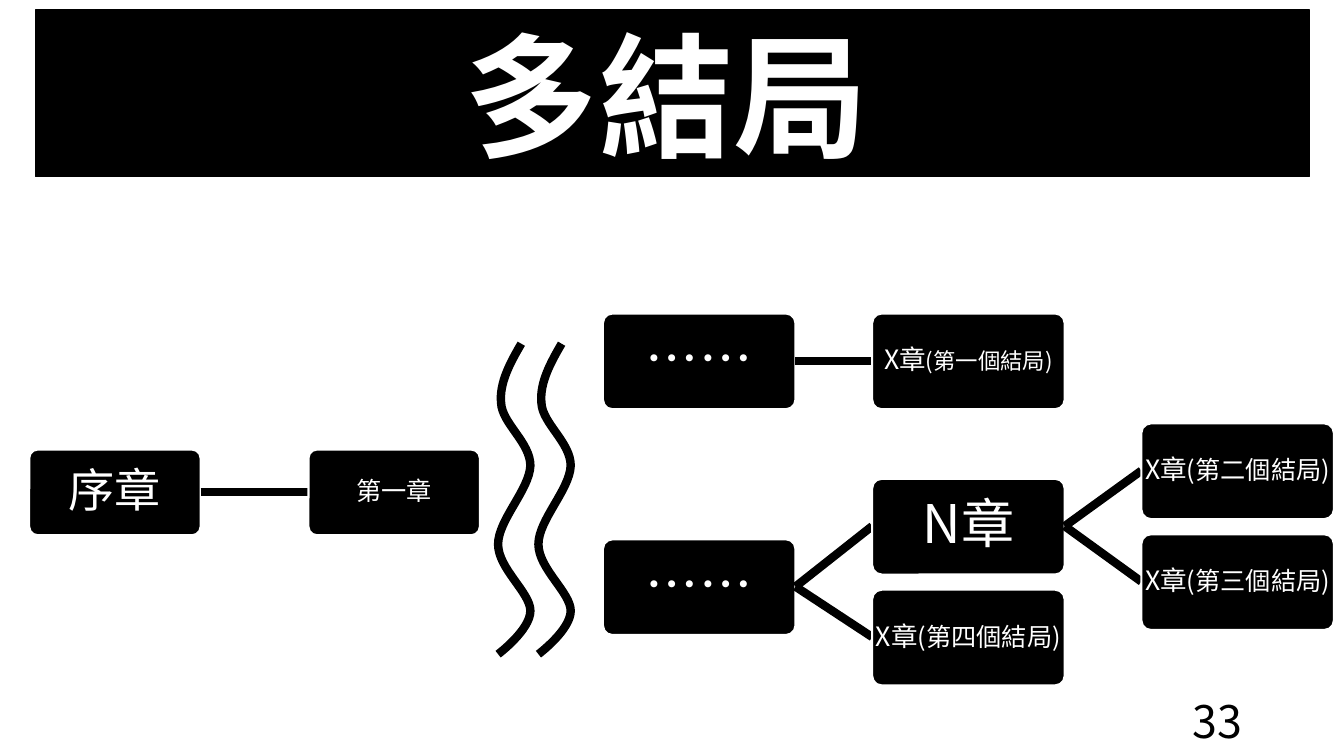
from lxml.etree import SubElement
from pptx import Presentation
from pptx.dml.color import RGBColor
from pptx.enum.lang import MSO_LANGUAGE_ID as LANG
from pptx.enum.shapes import MSO_CONNECTOR, MSO_SHAPE
from pptx.enum.text import MSO_ANCHOR, MSO_AUTO_SIZE, PP_ALIGN
from pptx.oxml.ns import qn
from pptx.util import Pt

PX = 9144  # 100 px to the inch
CJK = "Noto Sans CJK SC"


def rgb(value):
    return RGBColor.from_string(value)


def style(p, color, align):
    p.alignment = align
    p.font.name = CJK
    p.font.color.rgb = rgb(color)
    SubElement(p.font._rPr, qn("a:ea"), typeface=CJK)


prs = Presentation()
prs.slide_width, prs.slide_height = 1333 * PX, 750 * PX
s = prs.slides.add_slide(prs.slide_layouts[5])

# Title on a black bar
bar = s.shapes.add_shape(MSO_SHAPE.RECTANGLE, 35 * PX, 10 * PX, 1264 * PX, 165 * PX)
bar.shadow.inherit = False
bar.fill.solid()
bar.fill.fore_color.rgb = rgb("000000")
bar.line.color.rgb = rgb("000000")
bar.line.width = Pt(1)

title = s.shapes.title
s.shapes.element.append(title.element)  # bring in front of the bar
title.left, title.top, title.width, title.height = 416 * PX, 7 * PX, 490 * PX, 172 * PX
tf = title.text_frame
tf.text = "多結局"
tf.auto_size = MSO_AUTO_SIZE.NONE
tf.vertical_anchor = MSO_ANCHOR.MIDDLE
p = tf.paragraphs[0]
p.alignment = PP_ALIGN.CENTER
r = p.runs[0]
r.font.name = "Arial"
r.font.size, r.font.bold = Pt(96), True
r.font.color.rgb = rgb("FFFFFF")
r.font.language_id = LANG.TRADITIONAL_CHINESE

# Chapters: parent, left, top, width, height, inset, runs of text and size
SMALL, LARGE = (170, 85), (191, 95)
COLS = [29, 306, 598, 865, 1132]
chapters = {
    "prologue": (None, COLS[0], 446, *SMALL, 2, [("序章", 33)]),
    "first": ("prologue", COLS[1], 446, *SMALL, 2, [("第一章", 18)]),
    "upper": (None, COLS[2], 311, *LARGE, 3, [("……", 38)]),
    "ending 1": ("upper", COLS[3], 311, *LARGE, 1, [("X章", 19), ("(第一個結局)", 16)]),
    "lower": (None, COLS[2], 535, *LARGE, 3, [("……", 38)]),
    "branch": ("lower", COLS[3], 475, *LARGE, 3, [("N章", 38)]),
    "ending 2": ("branch", COLS[4], 420, *LARGE, 1, [("X章", 19), ("(第二個結局)", 18)]),
    "ending 3": ("branch", COLS[4], 530, *LARGE, 1, [("X章", 19), ("(第三個結局)", 18)]),
    "ending 4": ("lower", COLS[3], 585, *LARGE, 1, [("X章", 19), ("(第四個結局)", 18)]),
}

for parent, x, y, w, h, inset, runs in chapters.values():
    # Link from the middle of the parent's right side, under this box
    if parent:
        px, py, pw, ph = chapters[parent][1:5]
        link = s.shapes.add_connector(
            MSO_CONNECTOR.STRAIGHT,
            (px + pw) * PX, (py + ph // 2) * PX, x * PX, (y + h // 2) * PX)
        link.line.color.rgb = rgb("000000")
        link.line.width = Pt(6)
        SubElement(link.element.spPr, qn("a:effectLst"))

    # Chapter box
    box = s.shapes.add_shape(MSO_SHAPE.ROUNDED_RECTANGLE, x * PX, y * PX, w * PX, h * PX)
    box.adjustments[0] = 0.1
    box.shadow.inherit = False
    box.fill.solid()
    box.fill.fore_color.rgb = rgb("000000")
    box.line.color.rgb = rgb("FFFFFF")
    box.line.width = Pt(1.5)
    tf = box.text_frame
    tf.word_wrap = True
    tf.vertical_anchor = MSO_ANCHOR.MIDDLE
    tf.margin_left = tf.margin_right = tf.margin_top = tf.margin_bottom = inset * PX
    p = tf.paragraphs[0]
    style(p, "FFFFFF", PP_ALIGN.CENTER)
    p.line_spacing = 0.9
    for text, size in runs:
        r = p.add_run()
        r.text = text
        r.font.size = Pt(size)

# Two wavy break lines: a start, then two handles and an end for each curve
wave = [
    (517, 341), (506, 360), (495, 380), (497, 400),
    (498, 420), (526, 439), (526, 462), (525, 486), (494, 516), (494, 540),
    (494, 564), (526, 588), (526, 606), (526, 625), (494, 649), (494, 649),
]
for shift in (0, 40):
    knots = [((x + shift) * PX, y * PX) for x, y in wave]
    pen = s.shapes.build_freeform(*knots[0])
    pen.add_line_segments(knots[3::3], close=False)
    curve = pen.convert_to_shape()
    # Turn each straight segment into a cubic curve
    for i, segment in enumerate(list(curve.element.iter(qn("a:lnTo")))):
        segment.tag = qn("a:cubicBezTo")
        end = segment[0]
        for x, y in knots[3 * i + 1:3 * i + 3]:
            handle = SubElement(segment, qn("a:pt"))
            handle.set("x", str(x - curve.left))
            handle.set("y", str(y - curve.top))
        segment.append(end)
    curve.shadow.inherit = False
    curve.fill.background()
    curve.line.color.rgb = rgb("000000")
    curve.line.width = Pt(6)

# Page number
number = s.shapes.add_textbox(942 * PX, 695 * PX, 300 * PX, 40 * PX)
tf = number.text_frame
tf.text = "33"
tf.word_wrap = True
tf.vertical_anchor = MSO_ANCHOR.MIDDLE
p = tf.paragraphs[0]
style(p, "000000", PP_ALIGN.RIGHT)
p.font.size = Pt(32)

prs.save("out.pptx")
